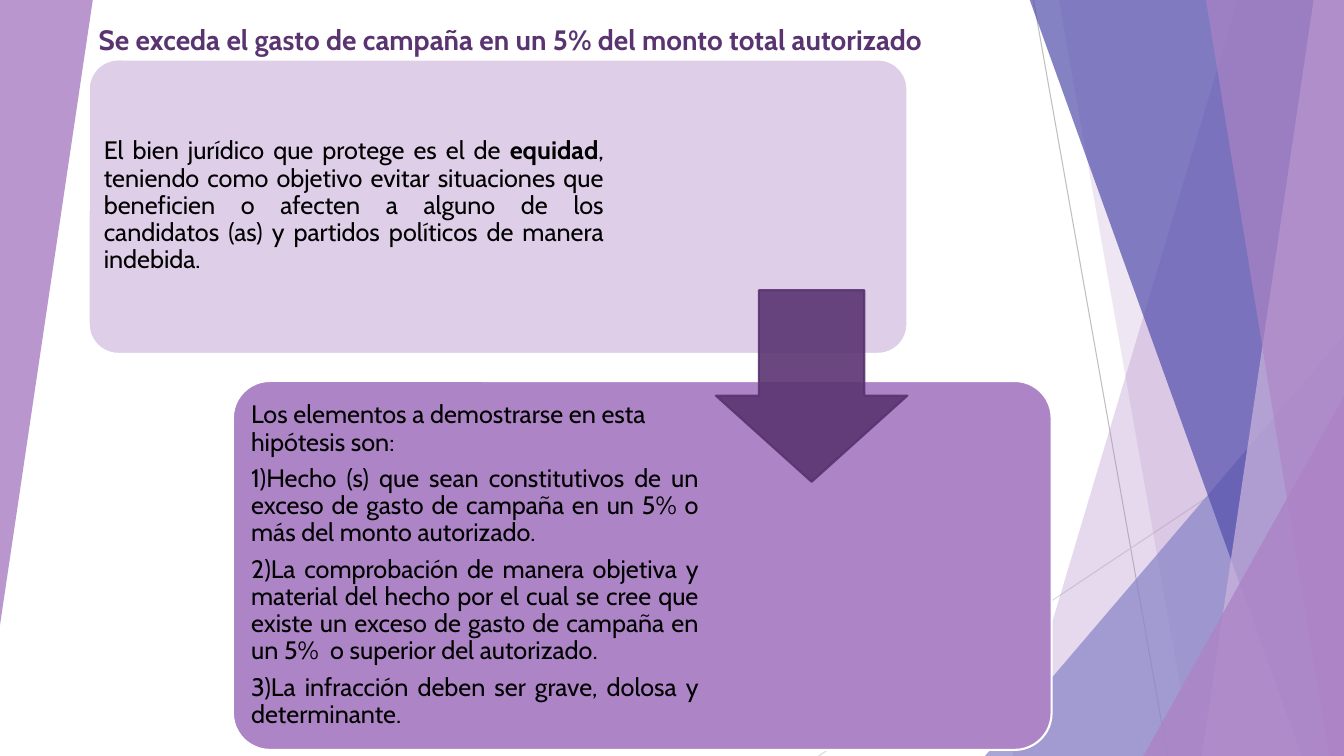
import pptx
import pptx.dml.color
import pptx.enum.shapes
import pptx.enum.text
import pptx.oxml
import pptx.oxml.ns
import pptx.util

PX = 9144  # EMU per px, 100 px to the inch
WIDTH, HEIGHT = 1333, 750
FONT = "Cabin"
BLACK, WHITE = "000000", "FFFFFF"
LILAC, PALE, PLUM = "AD84C6", "DECEE8", "5A3471"
SHAPES = pptx.enum.shapes.MSO_SHAPE
ALIGN = pptx.enum.text.PP_ALIGN
ANCHOR = pptx.enum.text.MSO_ANCHOR

PROTECTED_GOOD = [
    (ALIGN.JUSTIFY, [
        ("El bien jurídico que protege es el de ", False),
        ("equidad", True),
        (", teniendo como objetivo evitar situaciones que beneficien o afecten a alguno "
         "de los candidatos (as) y partidos políticos de manera indebida.", False),
    ]),
]
ELEMENTS = [
    (ALIGN.LEFT, [("Los elementos a demostrarse en esta hipótesis son:", False)]),
    (ALIGN.JUSTIFY, [("1)Hecho (s) que sean constitutivos de un exceso de gasto de campaña "
                      "en un 5% o más del monto autorizado.", False)]),
    (ALIGN.JUSTIFY, [("2)La comprobación de manera objetiva y material del hecho por el cual "
                      "se cree que existe un exceso de gasto de campaña en un 5%  o superior "
                      "del autorizado.", False)]),
    (ALIGN.JUSTIFY, [("3)La infracción deben ser grave, dolosa y determinante.", False)]),
]


def px(*lengths):
    return [pptx.util.Emu(length * PX) for length in lengths]


def paint(color_format, color, opacity=100):
    """Set a solid colour; opacity is a percentage."""
    color_format.rgb = pptx.dml.color.RGBColor.from_string(color)
    if opacity < 100:
        alpha = pptx.oxml.parse_xml(
            f'<a:alpha {pptx.oxml.ns.nsdecls("a")} val="{opacity * 1000}"/>')
        color_format._xFill.find(".//" + pptx.oxml.ns.qn("a:srgbClr")).append(alpha)


def style(shape, fill, opacity=100, line=None):
    shape.shadow.inherit = False
    shape.fill.solid()
    paint(shape.fill.fore_color, fill, opacity)
    if line:
        shape.line.width = pptx.util.Pt(1.5)
        shape.line.fill.solid()
        paint(shape.line.fill.fore_color, line, opacity)
    else:
        shape.line.fill.background()


def add_preset(slide, kind, box, adjustments, fill, opacity=100, line=None):
    shape = slide.shapes.add_shape(kind, *px(*box))
    for index, value in enumerate(adjustments):
        shape.adjustments[index] = value
    style(shape, fill, opacity, line)
    return shape


def add_wedge(slide, top_x, bottom_x, fill, opacity):
    """Fill from a slanted left edge to the right side of the slide."""
    builder = slide.shapes.build_freeform(top_x, -1, scale=PX)
    builder.add_line_segments([(WIDTH, -1), (WIDTH, HEIGHT), (bottom_x, HEIGHT)], close=True)
    style(builder.convert_to_shape(), fill, opacity)


def add_line(slide, ends, color):
    connector = slide.shapes.add_connector(
        pptx.enum.shapes.MSO_CONNECTOR.STRAIGHT, *px(*ends))
    connector.line.width = pptx.util.Pt(0.75)
    paint_line = connector.line.fill
    paint_line.solid()
    paint(paint_line.fore_color, color)
    properties = connector._element.spPr
    properties.append(pptx.oxml.parse_xml(
        f'<a:effectLst {pptx.oxml.ns.nsdecls("a")}/>'))


def add_run(paragraph, text, size, color, bold):
    run = paragraph.add_run()
    run.text = text
    run.font.name = FONT
    run.font.size = pptx.util.Pt(size)
    run.font.bold = bold
    paint_font = run.font.fill
    paint_font.solid()
    paint(paint_font.fore_color, color)


def add_title(slide, box, text):
    frame = slide.shapes.add_textbox(*px(*box)).text_frame
    frame.word_wrap = True
    add_run(frame.paragraphs[0], text, 20, PLUM, True)


def add_body(slide, box, paragraphs):
    frame = slide.shapes.add_textbox(*px(*box)).text_frame
    frame.word_wrap = True
    frame.vertical_anchor = ANCHOR.MIDDLE
    frame.margin_left, frame.margin_top, frame.margin_right, frame.margin_bottom = px(7, 7, 7, 7)
    for index, (alignment, runs) in enumerate(paragraphs):
        paragraph = frame.add_paragraph() if index else frame.paragraphs[0]
        paragraph.alignment = alignment
        paragraph.line_spacing = 0.9
        paragraph.space_after = pptx.util.Pt(6.5)
        for text, bold in runs:
            add_run(paragraph, text, 18, BLACK, bold)


def add_background(slide):
    add_line(slide, (1025, 0, 1158, HEIGHT), "BFBFBF")
    add_line(slide, (WIDTH, 403, 812, HEIGHT), "D9D9D9")
    add_wedge(slide, 1228, 1004, LILAC, 30)
    add_wedge(slide, 1050, 1183, LILAC, 20)
    add_preset(slide, SHAPES.ISOSCELES_TRIANGLE, (977, 333, 356, 417), [1], "8784C7", 72)
    add_wedge(slide, 1021, 1291, "524EAB", 70)
    add_wedge(slide, 1303, 1192, "CEB5DD", 70)
    add_wedge(slide, 1196, 1318, LILAC, 65)
    add_preset(slide, SHAPES.ISOSCELES_TRIANGLE, (1134, 393, 199, 357), [1], LILAC, 80)
    corner = add_preset(slide, SHAPES.ISOSCELES_TRIANGLE, (0, 0, 92, 620), [1], LILAC, 85)
    corner.rotation = 180


def main():
    presentation = pptx.Presentation()
    presentation.slide_width, presentation.slide_height = px(WIDTH, HEIGHT)
    slide = presentation.slides.add_slide(presentation.slide_layouts[6])

    # Decorative facets
    add_background(slide)

    # Title
    add_title(slide, (88, 17, 931, 44),
              "Se exceda el gasto de campaña en un 5% del monto total autorizado")

    # Two steps and the arrow between them
    add_preset(slide, SHAPES.ROUNDED_RECTANGLE, (88, 59, 812, 292), [0.1], PALE, line=WHITE)
    add_body(slide, (96, 67, 510, 275), PROTECTED_GOOD)
    add_preset(slide, SHAPES.ROUNDED_RECTANGLE, (231, 378, 812, 366), [0.1], LILAC, line=WHITE)
    add_body(slide, (242, 389, 458, 344), ELEMENTS)
    add_preset(slide, SHAPES.DOWN_ARROW, (710, 288, 190, 190), [0.55, 0.45], PLUM, 90, PLUM)

    presentation.save("out.pptx")


if __name__ == "__main__":
    main()
